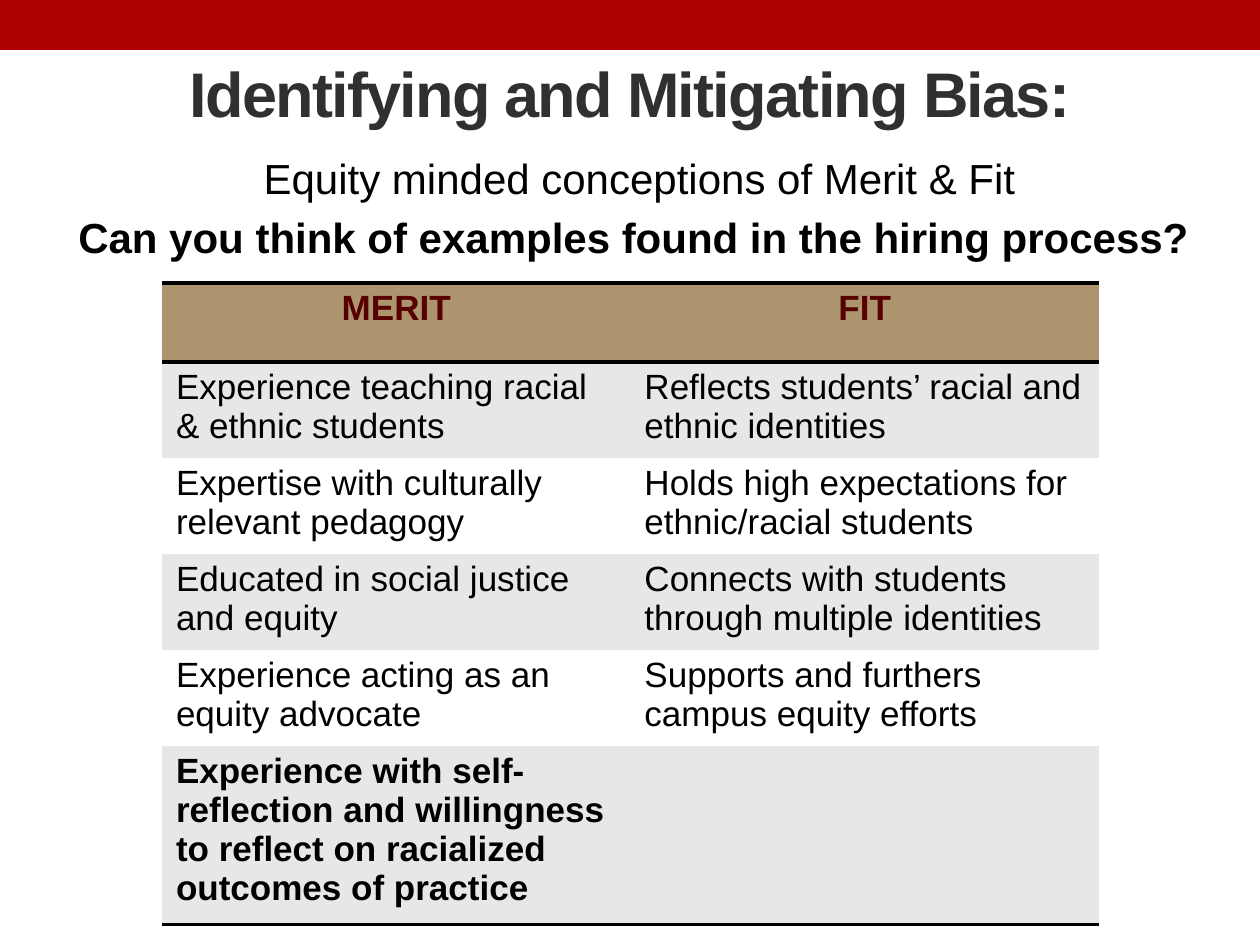
"""Build the slide on equity-minded conceptions of merit and fit."""
import pptx
import pptx.dml.color
import pptx.enum.text
import pptx.oxml
import pptx.oxml.ns
import pptx.util
from pptx.enum.shapes import MSO_SHAPE

RGB = pptx.dml.color.RGBColor
RED, DARK, BLACK = RGB(0xAD, 0x01, 0x01), RGB(0x30, 0x30, 0x30), RGB(0, 0, 0)
MAROON, TAN = RGB(0x56, 0, 0), RGB(0xAC, 0x95, 0x6E)
GREY, WHITE = RGB(0xE7, 0xE7, 0xE7), RGB(0xFF, 0xFF, 0xFF)
CENTER = pptx.enum.text.PP_ALIGN.CENTER
LEFT = pptx.enum.text.PP_ALIGN.LEFT
FONT = "Arial"
NO_STYLE = "{2D5ABB26-0587-4C30-8999-92F81FD0307C}"

TITLE = "Identifying and Mitigating Bias:"
LINES = [
    ("Equity minded conceptions of Merit & Fit", False),
    ("Can you think of examples found in the hiring process? ", True),
]
ROWS = [
    ("MERIT", "FIT"),
    ("Experience teaching racial & ethnic students",
     "Reflects students’ racial and ethnic identities"),
    ("Expertise with culturally relevant pedagogy",
     "Holds high expectations for ethnic/racial students"),
    ("Educated in social justice and equity",
     "Connects with students through multiple identities"),
    ("Experience acting as an equity advocate",
     "Supports and furthers campus equity efforts"),
    ("Experience with self-reflection and willingness to reflect on "
     "racialized outcomes of practice", ""),
]
ROW_HEIGHTS = [79, 96, 96, 96, 96, 179]


def px(n):
    return pptx.util.Emu(round(n * 914400 / 126))


def place(sp, x, y, w, h):
    sp.left, sp.top, sp.width, sp.height = px(x), px(y), px(w), px(h)


def style(p, size, color, bold, align):
    p.alignment = align
    for r in p.runs:
        r.font.name, r.font.size = FONT, pptx.util.Pt(size)
        r.font.bold, r.font.color.rgb = bold, color


def add_border(cell, side):
    cell._tc.get_or_add_tcPr().append(pptx.oxml.parse_xml(
        f'<a:{side} {pptx.oxml.ns.nsdecls("a")} w="25400"><a:solidFill>'
        f'<a:srgbClr val="{BLACK}"/></a:solidFill></a:{side}>'))


def add_band(s):
    sp = s.shapes.add_shape(MSO_SHAPE.RECTANGLE, 0, 0, px(1260), px(50))
    sp.shadow.inherit = False
    sp.fill.solid()
    sp.fill.fore_color.rgb = RED
    sp.line.fill.background()


def fill_title(s):
    sp = s.shapes.title
    place(sp, 63, 24, 1134, 136)
    tf = sp.text_frame
    tf.text = TITLE
    tf.auto_size = pptx.enum.text.MSO_AUTO_SIZE.NONE
    tf.vertical_anchor = pptx.enum.text.MSO_ANCHOR.MIDDLE
    p = tf.paragraphs[0]
    style(p, 36, DARK, True, CENTER)
    p.runs[0].font._element.set("spc", "-100")


def fill_body(s):
    sp = s.placeholders[1]
    place(sp, 63, 146, 1153, 725)
    tf = sp.text_frame
    tf.text = "\n".join(text for text, _ in LINES)
    tf.auto_size = pptx.enum.text.MSO_AUTO_SIZE.NONE
    for p, (_, bold) in zip(tf.paragraphs, LINES):
        style(p, 24, BLACK, bold, CENTER)
        pPr = p._p.get_or_add_pPr()
        pPr.set("marL", "0")
        pPr.set("indent", "0")
        pPr.append(pptx.oxml.parse_xml(
            f'<a:buNone {pptx.oxml.ns.nsdecls("a")}/>'))


def add_table(s):
    frame = s.shapes.add_table(len(ROWS), 2, px(162), px(283),
                               px(937), px(sum(ROW_HEIGHTS)))
    table = frame.table
    table._tbl.tblPr.find(pptx.oxml.ns.qn("a:tableStyleId")).text = NO_STYLE
    last = len(ROWS) - 1
    for i, (row, height) in enumerate(zip(ROWS, ROW_HEIGHTS)):
        table.rows[i].height = px(height)
        head = i == 0
        for j, text in enumerate(row):
            cell = table.cell(i, j)
            cell.text = text
            cell.margin_left = cell.margin_right = px(14)
            cell.margin_top = cell.margin_bottom = px(6)
            style(cell.text_frame.paragraphs[0], 20,
                  MAROON if head else BLACK, i in (0, last),
                  CENTER if head else LEFT)
            if head:
                add_border(cell, "lnT")
            if i in (0, last):
                add_border(cell, "lnB")
            cell.fill.solid()
            cell.fill.fore_color.rgb = TAN if head else (WHITE, GREY)[i % 2]


def main():
    prs = pptx.Presentation()
    prs.slide_width, prs.slide_height = px(1260), px(945)
    s = prs.slides.add_slide(prs.slide_layouts[1])
    add_band(s)
    fill_title(s)
    fill_body(s)
    add_table(s)
    prs.save("out.pptx")


if __name__ == "__main__":
    main()
